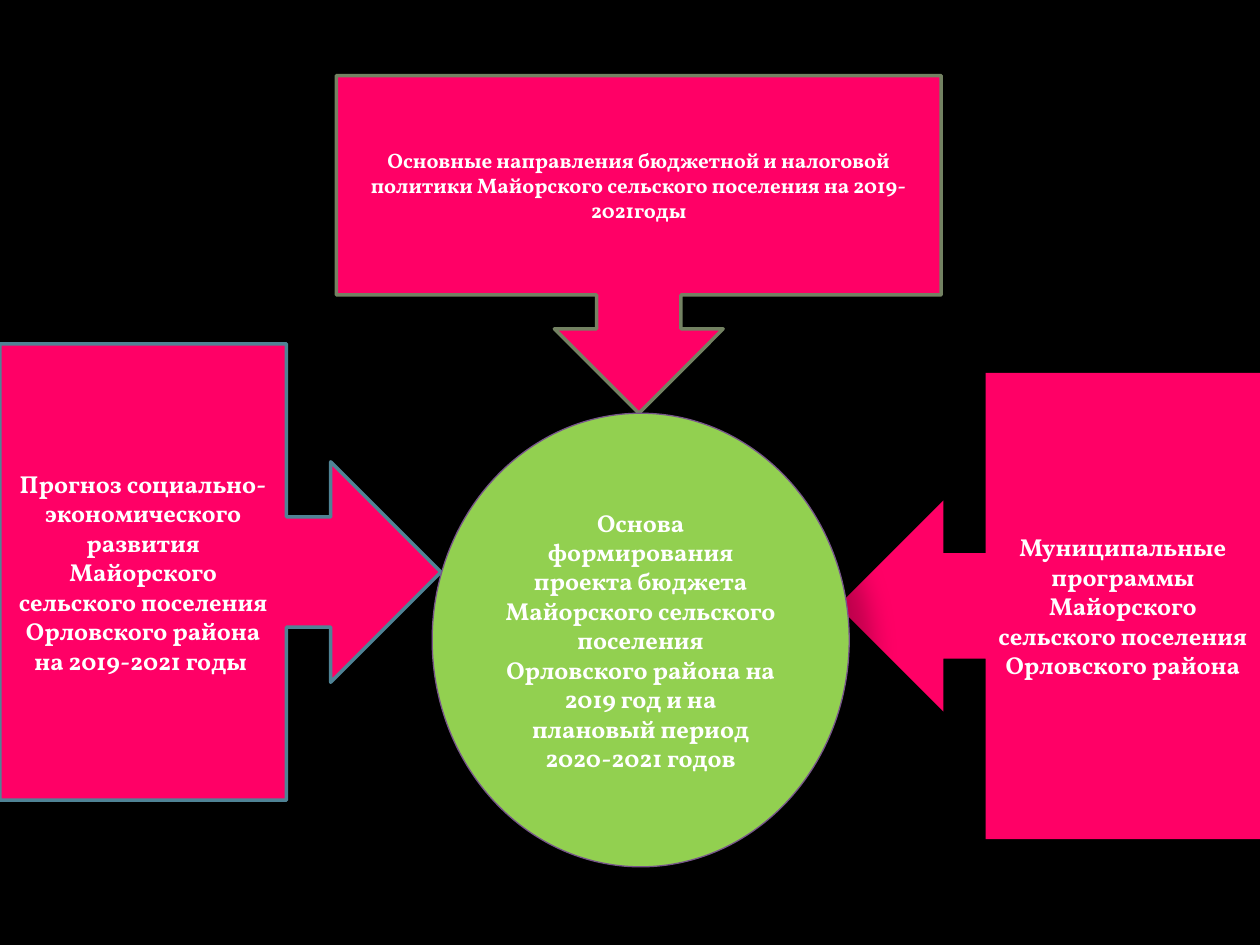
from lxml import etree
from pptx import Presentation
from pptx import util as u
from pptx.dml.color import RGBColor
from pptx.enum import shapes, text
from pptx.oxml.ns import qn

BLACK = RGBColor(0x00, 0x00, 0x00)
WHITE = RGBColor(0xFF, 0xFF, 0xFF)
PINK = RGBColor(0xFF, 0x00, 0x66)
GREEN = RGBColor(0x92, 0xD0, 0x50)
OLIVE = RGBColor(0x73, 0x82, 0x62)
TEAL = RGBColor(0x4F, 0x83, 0x95)
PURPLE = RGBColor(0x77, 0x56, 0x8A)
FONT = "Vollkorn"


def add_shadow(sp):
    shadow = etree.SubElement(
        sp._element.spPr.find(qn("a:effectLst")), qn("a:outerShdw"),
        blurRad=str(u.Pt(15)), dist=str(u.Pt(18)), dir="2700000",
        sy="90000", rotWithShape="0")
    color = etree.SubElement(shadow, qn("a:srgbClr"), val=str(BLACK))
    etree.SubElement(color, qn("a:alpha"), val="25500")


prs = Presentation()
prs.slide_width, prs.slide_height = u.Inches(10), u.Inches(7.5)
col, row = prs.slide_width / 100, prs.slide_height / 75

s = prs.slides.add_slide(prs.slide_layouts[6])
s.background.fill.solid()
s.background.fill.fore_color.rgb = BLACK

kinds = shapes.MSO_SHAPE
blocks = [
    (kinds.DOWN_ARROW_CALLOUT, (26.7, 6, 48, 26.8), PINK, OLIVE, 2, False, 12,
     "Основные направления бюджетной и налоговой политики "
     "Майорского сельского поселения на 2019-2021годы"),
    (kinds.RIGHT_ARROW_CALLOUT, (0, 27.3, 35, 36.2), PINK, TEAL, 2, False, 14,
     "Прогноз социально-экономического развития Майорского сельского "
     "поселения Орловского района на 2019-2021 годы "),
    (kinds.LEFT_ARROW_CALLOUT, (66.5, 29.6, 33.5, 37), PINK, None, 0, True, 14,
     "Муниципальные программы Майорского сельского поселения "
     "Орловского района"),
    (kinds.OVAL, (34.3, 32.8, 33.1, 36), GREEN, PURPLE, 0.75, True, 14,
     "Основа формирования проекта бюджета Майорского сельского поселения "
     "Орловского района на 2019 год и на плановый период 2020-2021 годов"),
]

for kind, (x, y, w, h), fill, line, width, shaded, size, words in blocks:
    sp = s.shapes.add_shape(kind, int(x * col), int(y * row),
                            int(w * col), int(h * row))
    sp.fill.solid()
    sp.fill.fore_color.rgb = fill
    if line is None:
        sp.line.fill.background()
    else:
        sp.line.color.rgb = line
        sp.line.width = u.Pt(width)
    sp.shadow.inherit = False
    if shaded:
        add_shadow(sp)

    tf = sp.text_frame
    tf.word_wrap = True
    tf.vertical_anchor = text.MSO_ANCHOR.MIDDLE
    p = tf.paragraphs[0]
    p.text = words
    p.alignment = text.PP_ALIGN.CENTER
    p.font.name = FONT
    p.font.size = u.Pt(size)
    p.font.bold = True
    p.font.color.rgb = WHITE

prs.save("out.pptx")
